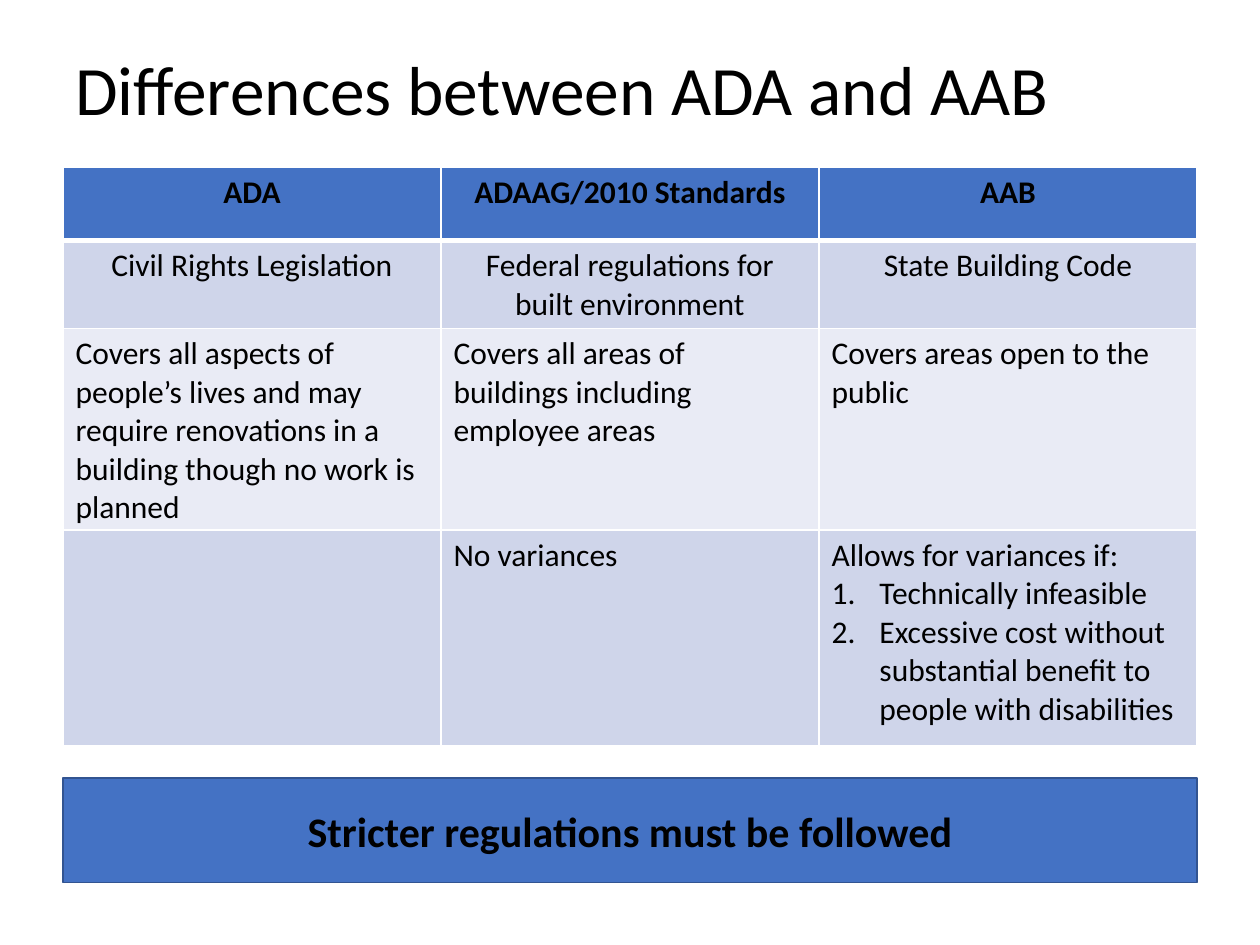
from dataclasses import dataclass

from lxml.etree import SubElement
from pptx import Presentation
from pptx.dml.color import RGBColor as Rgb
from pptx.enum.shapes import MSO_SHAPE as Shape
from pptx.enum.text import MSO_ANCHOR as Anchor, PP_ALIGN as Align
from pptx.oxml.ns import qn
from pptx.util import Emu, Inches, Pt


@dataclass(frozen=True)
class Theme:
    font: str = "Calibri"
    ink: str = "000000"
    accent: str = "4472C4"
    outline: str = "325491"
    rule: str = "FFFFFF"
    bands: tuple = ("CFD5EA", "E9EBF5")
    title_size: float = 39.6
    body_size: float = 18
    banner_size: float = 24


THEME = Theme()
WIDTH, HEIGHT = Inches(10), Inches(7.5)
MARGIN, CONTENT = 0.05, 0.9
ROW_HEIGHTS = (0.58, 0.67, 1.54, 1.71)
NUMBER_INDENT = Inches(0.38)
COMPARISON = (
    ("ADA", "ADAAG/2010 Standards", "AAB"),
    ("Civil Rights Legislation", "Federal regulations for built environment",
     "State Building Code"),
    ("Covers all aspects of people’s lives and may require renovations in a "
     "building though no work is planned",
     "Covers all areas of buildings including employee areas",
     "Covers areas open to the public"),
    ("", "No variances", "Allows for variances if:"),
)
VARIANCE_GROUNDS = (
    "Technically infeasible",
    "Excessive cost without substantial benefit to people with disabilities",
)


def area(top, height):
    return (Emu(int(WIDTH * MARGIN)), Emu(int(HEIGHT * top)),
            Emu(int(WIDTH * CONTENT)), Emu(int(HEIGHT * height)))


def paint(part, color):
    part.fill.solid()
    part.fill.fore_color.rgb = Rgb.from_string(color)


def write(paragraph, text, size, bold=False, align=Align.LEFT):
    paragraph.alignment = align
    run = paragraph.add_run()
    run.text = text
    run.font.name = THEME.font
    run.font.size = Pt(size)
    run.font.bold = bold
    run.font.color.rgb = Rgb.from_string(THEME.ink)


def number(paragraph):
    props = paragraph._p.get_or_add_pPr()
    props.set("marL", str(NUMBER_INDENT))
    props.set("indent", str(-NUMBER_INDENT))
    SubElement(props, qn("a:buFont"), typeface="+mj-lt")
    SubElement(props, qn("a:buAutoNum"), type="arabicPeriod")


def rule_cell(cell, widths):
    props = cell._tc.get_or_add_tcPr()
    for side, width in widths.items():
        edge = SubElement(props, qn(f"a:ln{side}"), w=str(Pt(width)))
        fill = SubElement(edge, qn("a:solidFill"))
        SubElement(fill, qn("a:srgbClr"), val=THEME.rule)


def add_title(slide, text):
    title = slide.shapes.add_textbox(*area(0.056, 0.167)).text_frame
    title.word_wrap = True
    title.vertical_anchor = Anchor.TOP
    title.margin_top = Inches(0.02)
    heading = title.paragraphs[0]
    heading.line_spacing = 0.9
    write(heading, text, THEME.title_size)


def add_comparison(slide):
    columns = len(COMPARISON[0])
    place = area(0.177, sum(ROW_HEIGHTS) / 7.5)
    table = slide.shapes.add_table(len(COMPARISON), columns, *place).table
    for row, (height, texts) in enumerate(zip(ROW_HEIGHTS, COMPARISON)):
        table.rows[row].height = Inches(height)
        header = row == 0
        widths = {"L": 1, "R": 1, "T": 3 if row == 1 else 1,
                  "B": 3 if header else 1}
        for column, text in enumerate(texts):
            cell = table.cell(row, column)
            rule_cell(cell, widths)
            paint(cell, THEME.accent if header else THEME.bands[(row - 1) % 2])
            if text:
                write(cell.text_frame.paragraphs[0], text, THEME.body_size,
                      header, Align.CENTER if row < 2 else Align.LEFT)
    variances = table.cell(len(COMPARISON) - 1, columns - 1).text_frame
    for ground in VARIANCE_GROUNDS:
        item = variances.add_paragraph()
        write(item, ground, THEME.body_size)
        number(item)


def add_banner(slide, text):
    banner = slide.shapes.add_shape(Shape.RECTANGLE, *area(0.823, 0.111))
    banner.shadow.inherit = False
    paint(banner, THEME.accent)
    banner.line.color.rgb = Rgb.from_string(THEME.outline)
    banner.line.width = Pt(1)
    banner.text_frame.word_wrap = True
    banner.text_frame.vertical_anchor = Anchor.MIDDLE
    write(banner.text_frame.paragraphs[0], text, THEME.banner_size, True,
          Align.CENTER)


def main():
    deck = Presentation()
    deck.slide_width, deck.slide_height = WIDTH, HEIGHT
    slide = deck.slides.add_slide(deck.slide_layouts[6])
    add_title(slide, "Differences between ADA and AAB")
    add_comparison(slide)
    add_banner(slide, "Stricter regulations must be followed")
    deck.save("out.pptx")


if __name__ == "__main__":
    main()
